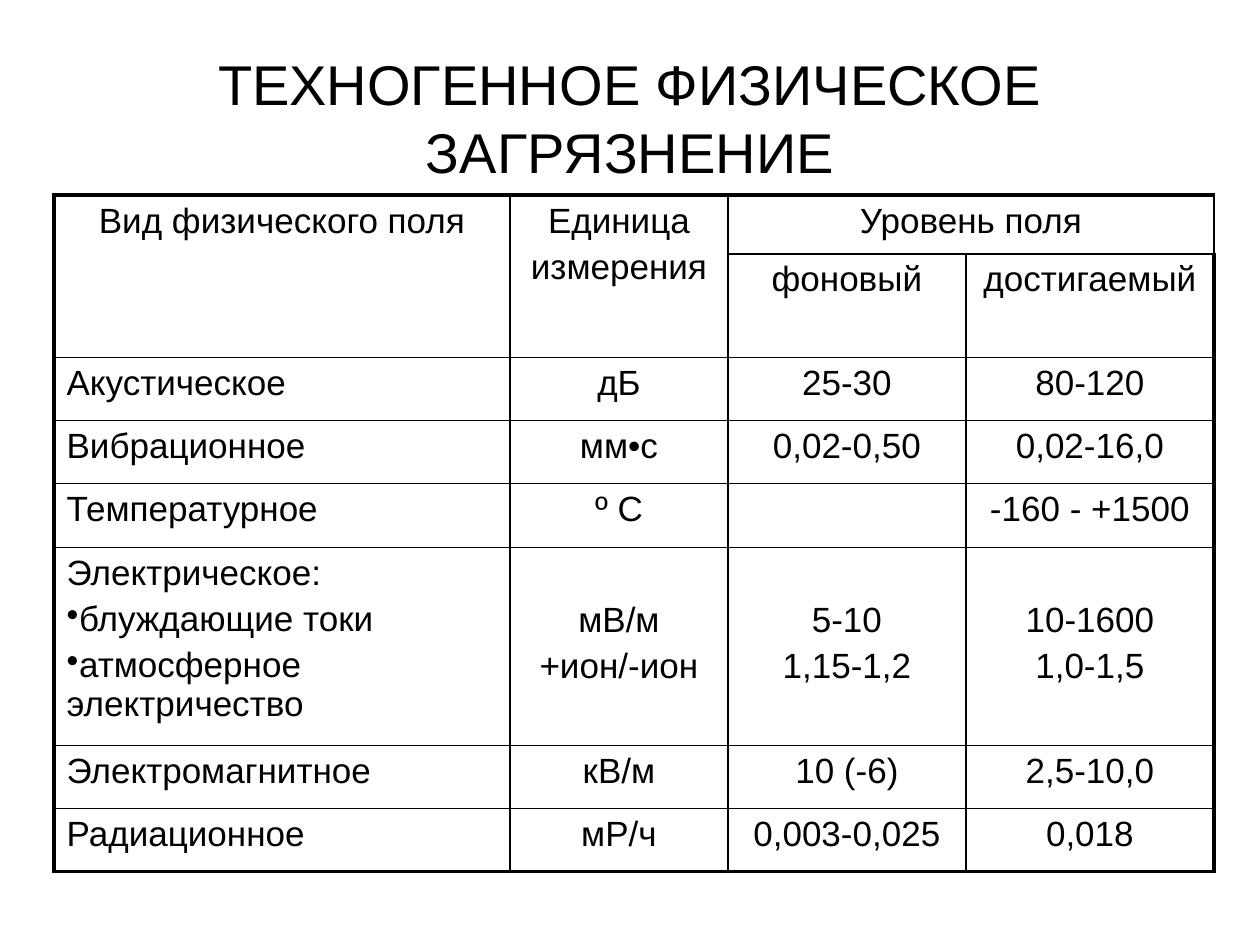
from dataclasses import dataclass

from lxml import etree
from pptx import Presentation
from pptx import util as u
from pptx.dml.color import RGBColor
from pptx.enum import text
from pptx.oxml import ns
from pptx.slide import Slide

BLACK = RGBColor(0, 0, 0)
THIN, THICK = 1, 2.25
BULLET = "•"
CENTER, LEFT = text.PP_ALIGN.CENTER, text.PP_ALIGN.LEFT

# Table grid, in px
COLUMNS = [456, 218, 238, 248]
ROWS = [59, 98, 63, 63, 64, 198, 63, 63]
LINE_PITCH = 47

# (row, column, row to, column to)
MERGES = [(0, 0, 1, 0), (0, 1, 1, 1), (0, 2, 0, 3)]

HEADER_ROWS = 2
GROUP_ROW = 5

# One list of cells per row, one string per paragraph
FIELDS = [
    [["Вид физического поля"], ["Единица", "измерения"], ["Уровень поля"], []],
    [[], [], ["фоновый"], ["достигаемый"]],
    [["Акустическое"], ["дБ"], ["25-30"], ["80-120"]],
    [["Вибрационное"], ["мм•с"], ["0,02-0,50"], ["0,02-16,0"]],
    [["Температурное"], ["º С"], [], ["-160 - +1500"]],
    [["Электрическое:", "•блуждающие токи", "•атмосферное электричество"],
     ["мВ/м", "+ион/-ион"], ["5-10", "1,15-1,2"], ["10-1600", "1,0-1,5"]],
    [["Электромагнитное"], ["кВ/м"], ["10 (-6)"], ["2,5-10,0"]],
    [["Радиационное"], ["мР/ч"], ["0,003-0,025"], ["0,018"]],
]


def px(n):
    return u.Emu(round(n * 914400 / 126))


@dataclass
class Page:
    slide: Slide
    font: str = "Arial"
    color: RGBColor = BLACK
    title_size: int = 32
    body_size: int = 20

    def add_words(self, p, words, size, align):
        p.alignment = align
        if words.startswith(BULLET):
            words = words[len(BULLET):]
            p_pr = p._p.get_or_add_pPr()
            p_pr.set("marL", "0")
            p_pr.set("indent", "0")
            etree.SubElement(p_pr, ns.qn("a:buChar"), char=BULLET)
        r = p.add_run()
        r.text = words
        r.font.name = self.font
        r.font.size = u.Pt(size)
        r.font.color.rgb = self.color

    def title(self, x, y, w, h, words):
        tf = self.slide.shapes.add_textbox(px(x), px(y), px(w), px(h)).text_frame
        tf.word_wrap = True
        tf.vertical_anchor = text.MSO_ANCHOR.MIDDLE
        self.add_words(tf.paragraphs[0], words, self.title_size, CENTER)

    def border(self, cell, side, width):
        ln = etree.SubElement(cell._tc.get_or_add_tcPr(), ns.qn(f"a:ln{side}"),
                              w=str(u.Pt(width)))
        fill = etree.SubElement(ln, ns.qn("a:solidFill"))
        etree.SubElement(fill, ns.qn("a:srgbClr"), val=str(self.color))

    def fill_cell(self, cell, lines, align):
        tf = cell.text_frame
        for i, words in enumerate(lines):
            p = tf.add_paragraph() if i else tf.paragraphs[0]
            p.space_before = u.Pt(self.body_size * 0.2)
            self.add_words(p, words, self.body_size, align)

    def table(self, x, y, columns, rows, cells):
        table = self.slide.shapes.add_table(
            len(rows), len(columns), px(x), px(y),
            px(sum(columns)), px(sum(rows))).table
        table.first_row = table.horz_banding = False
        for column, width in zip(table.columns, columns):
            column.width = px(width)
        for row, height in zip(table.rows, rows):
            row.height = px(height)

        last_row, last_column = len(rows) - 1, len(columns) - 1
        for r, line in enumerate(cells):
            for c, lines in enumerate(line):
                cell = table.cell(r, c)
                # Thick outer frame, thin inner lines
                edges = {"L": c == 0, "R": c == last_column,
                         "T": r == 0, "B": r == last_row}
                for side, outer in edges.items():
                    self.border(cell, side, THICK if outer else THIN)
                cell.fill.background()
                named = c == 0 and r >= HEADER_ROWS
                self.fill_cell(cell, lines, LEFT if named else CENTER)
        return table


def main():
    prs = Presentation()
    prs.slide_width, prs.slide_height = px(1260), px(945)
    page = Page(prs.slides.add_slide(prs.slide_layouts[6]))

    # Title
    page.title(63, 38, 1134, 158, "ТЕХНОГЕННОЕ ФИЗИЧЕСКОЕ ЗАГРЯЗНЕНИЕ")

    # Table of physical fields
    table = page.table(54, 195, COLUMNS, ROWS, FIELDS)
    for r, c, r_to, c_to in MERGES:
        table.cell(r, c).merge(table.cell(r_to, c_to))

    # Values of the grouped row start level with its first bullet
    for c in range(1, len(COLUMNS)):
        table.cell(GROUP_ROW, c).margin_top = u.Inches(0.05) + px(LINE_PITCH)

    prs.save("out.pptx")


if __name__ == "__main__":
    main()
